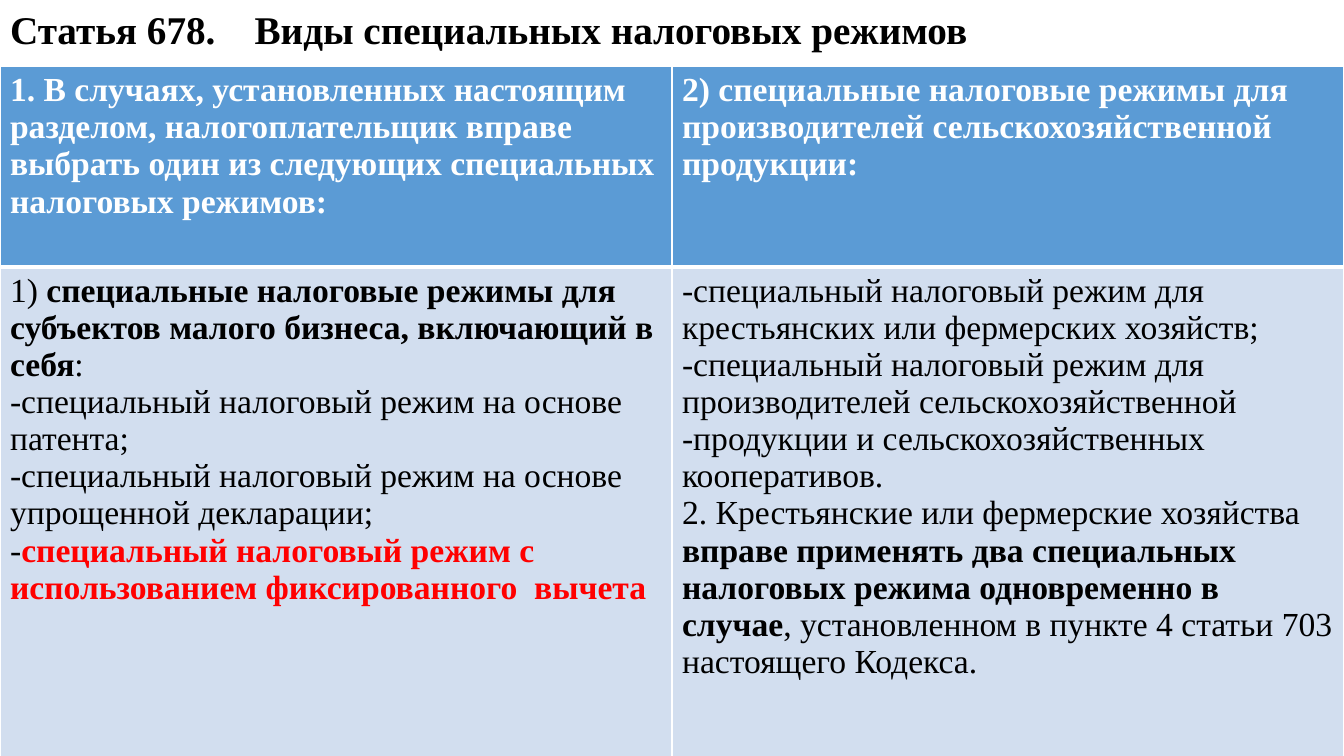
from lxml import etree
from pptx import Presentation
from pptx import util as u
from pptx.dml.color import RGBColor
from pptx.enum import text
from pptx.oxml import ns

WIDTH, HEIGHT = u.Cm(33.87), u.Cm(19.05)
FONT = "Times New Roman"
BLACK, WHITE, RED = "000000", "FFFFFF", "FF0000"
HEADER_FILL, BODY_FILL = "5B9BD5", "D2DEEF"

TITLE = "Статья 678.    Виды специальных налоговых режимов"
HEADERS = [
    "1. В случаях, установленных настоящим разделом, налогоплательщик вправе "
    "выбрать один из следующих специальных налоговых режимов:",
    "2) специальные налоговые режимы для производителей сельскохозяйственной продукции:",
]
# Each column is a list of paragraphs, each paragraph a list of (text, format) runs.
BOLD = {"bold": True}
COLUMNS = [
    [
        [("1) ", {}),
         ("специальные налоговые режимы для субъектов малого бизнеса, включающий в себя", BOLD),
         (":", {})],
        [("-специальный налоговый режим на основе патента;", {})],
        [("-специальный налоговый режим на основе упрощенной декларации;", {})],
        [("-", {}),
         ("специальный налоговый режим с использованием фиксированного  вычета",
          {"bold": True, "color": RED})],
    ],
    [
        [("-специальный налоговый режим для крестьянских или фермерских хозяйств;", {})],
        [("-специальный налоговый режим для производителей сельскохозяйственной", {})],
        [("-продукции и сельскохозяйственных кооперативов.", {})],
        [("2. Крестьянские или фермерские хозяйства ", {}),
         ("вправе применять два специальных налоговых режима одновременно в случае", BOLD),
         (", установленном в пункте 4 статьи 703 настоящего Кодекса.", {})],
    ],
]


def rgb(color):
    return RGBColor.from_string(color)


def add_run(p, words, size=24, bold=False, color=BLACK):
    r = p.add_run()
    r.text = words
    r.font.name, r.font.size, r.font.bold = FONT, u.Pt(size), bold
    r.font.color.rgb = rgb(color)


def set_borders(cell, bottom=1):
    """Draw white cell borders, widths in points; call before filling the cell."""
    tc_pr = cell._tc.get_or_add_tcPr()
    for side, width in (("L", 1), ("R", 1), ("T", 1), ("B", bottom)):
        ln = etree.SubElement(tc_pr, ns.qn(f"a:ln{side}"), w=str(u.Pt(width)))
        fill = etree.SubElement(ln, ns.qn("a:solidFill"))
        etree.SubElement(fill, ns.qn("a:srgbClr"), val=WHITE)


def fill_cell(cell, paragraphs, color, bottom=1):
    set_borders(cell, bottom)
    cell.fill.solid()
    cell.fill.fore_color.rgb = rgb(color)
    tf = cell.text_frame
    for i, runs in enumerate(paragraphs):
        p = tf.add_paragraph() if i else tf.paragraphs[0]
        for words, style in runs:
            add_run(p, words, **style)


def add_title(s, left, top, width, height):
    sp = s.shapes.title
    sp.left, sp.top, sp.width, sp.height = left, top, width, height
    tf = sp.text_frame
    tf.word_wrap = True
    tf.auto_size = text.MSO_AUTO_SIZE.NONE
    tf.vertical_anchor = text.MSO_ANCHOR.TOP
    p = tf.paragraphs[0]
    p.alignment = text.PP_ALIGN.LEFT
    p.line_spacing = 1.0
    p.space_before = u.Pt(0)
    add_run(p, TITLE, size=28, bold=True)


def add_regimes_table(s, left, top, width, height):
    table = s.shapes.add_table(2, len(HEADERS), left, top, width, height).table
    header_height = u.Cm(5.05)
    table.rows[0].height = header_height
    table.rows[1].height = height - header_height
    for i, (header, column) in enumerate(zip(HEADERS, COLUMNS)):
        table.columns[i].width = width // len(HEADERS)
        header_runs = [(header, {"bold": True, "color": WHITE})]
        fill_cell(table.cell(0, i), [header_runs], HEADER_FILL, bottom=3)
        fill_cell(table.cell(1, i), column, BODY_FILL)


def main():
    prs = Presentation()
    prs.slide_width, prs.slide_height = WIDTH, HEIGHT
    s = prs.slides.add_slide(prs.slide_layouts[5])
    add_title(s, 0, 0, WIDTH, u.Cm(3.33))
    add_regimes_table(s, 0, u.Cm(1.68), WIDTH, u.Cm(17.65))
    prs.save("out.pptx")


if __name__ == "__main__":
    main()
